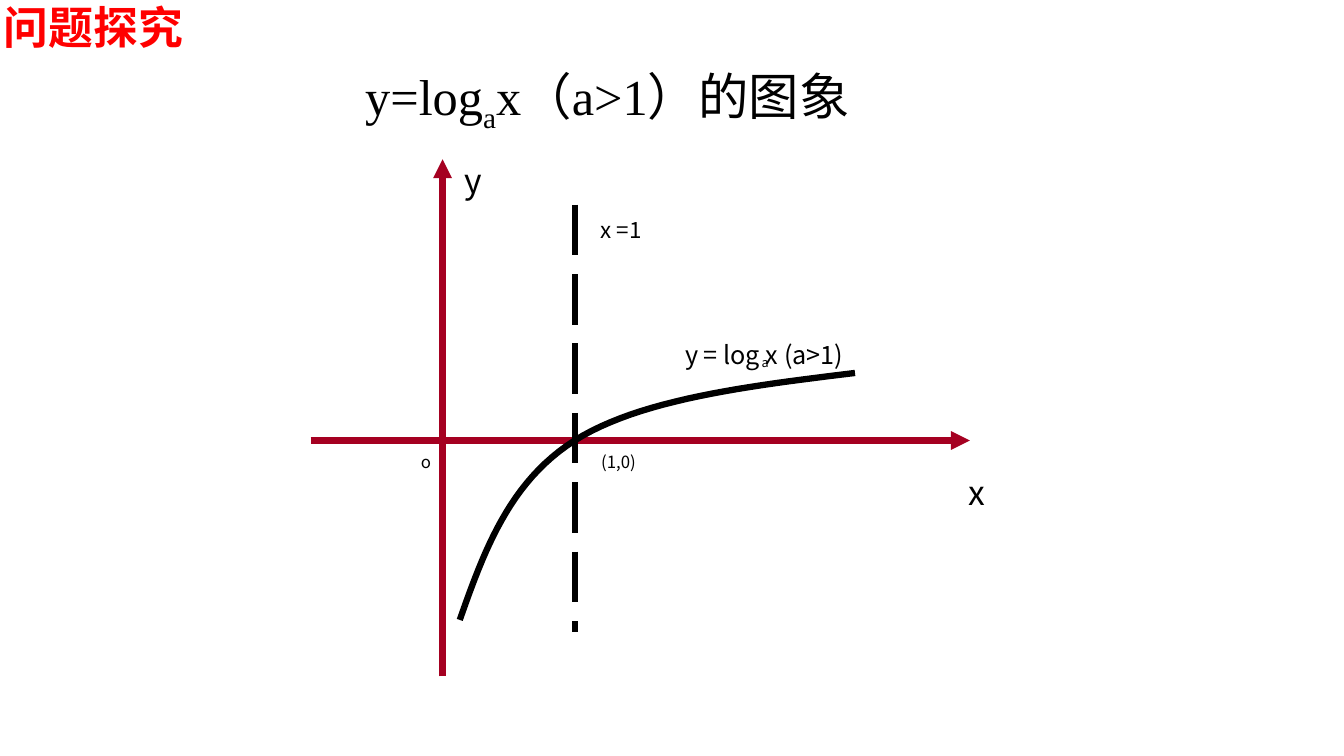
from dataclasses import dataclass

from lxml.etree import SubElement
from pptx import Presentation
from pptx.dml.color import RGBColor
from pptx.enum.dml import MSO_LINE_DASH_STYLE as Dash
from pptx.enum.shapes import MSO_CONNECTOR
from pptx.enum.text import MSO_AUTO_SIZE as AutoSize, PP_ALIGN
from pptx.oxml import parse_xml
from pptx.oxml.ns import nsdecls, qn
from pptx.util import Inches, Pt

BLACK = RGBColor(0x00, 0x00, 0x00)
RED = RGBColor(0xFF, 0x00, 0x00)
CRIMSON = RGBColor(0xA5, 0x00, 0x21)
SANS = "Noto Sans CJK SC"
SERIF = "Times New Roman"
STROKE = Pt(4.5)


@dataclass
class Line:
    start: tuple[float, float]
    end: tuple[float, float]
    color: RGBColor
    arrow: bool = False
    dash: Dash | None = None


@dataclass
class Label:
    text: str
    left: float
    top: float
    width: float
    height: float
    size: int


LINES = [
    Line((3.08, 4.37), (9.62, 4.37), CRIMSON, arrow=True),
    Line((4.39, 6.71), (4.39, 1.58), CRIMSON, arrow=True),
    Line((5.7, 2.03), (5.7, 6.27), BLACK, dash=Dash.LONG_DASH),
]

LABELS = [
    Label("x", 9.59, 4.68, 0.2, 0.18, 24),
    Label("y", 4.59, 1.59, 0.2, 0.18, 24),
    Label("o", 4.17, 4.48, 0.11, 0.17, 12),
    Label("(1,0)", 5.86, 4.48, 0.55, 0.17, 12),
    Label("x =1", 5.86, 2.14, 0.6, 0.23, 16),
    Label("y = log x (a>1)", 6.68, 3.37, 1.8, 0.26, 18),
    Label("a", 7.55, 3.52, 0.08, 0.13, 9),
]

# Each Bezier segment: start, two controls, end
CURVE = [
    ((4.56, 6.15), (4.8, 5.47), (5.05, 4.78), (5.7, 4.37)),
    ((5.7, 4.37), (6.35, 3.96), (7.42, 3.83), (8.48, 3.7)),
]
CURVE_STEPS = 24


def set_font(font, name: str, size: int, color: RGBColor) -> None:
    font.name, font.size = name, Pt(size)
    font.color.rgb = color


def add_box(slide, left: float, top: float, width: float, height: float):
    return slide.shapes.add_textbox(
        Inches(left), Inches(top), Inches(width), Inches(height)).text_frame


def add_line(slide, line: Line) -> None:
    connector = slide.shapes.add_connector(
        MSO_CONNECTOR.STRAIGHT, *map(Inches, line.start + line.end))
    connector.line.color.rgb = line.color
    connector.line.width = STROKE
    if line.dash is not None:
        connector.line.dash_style = line.dash
    if line.arrow:
        SubElement(connector.line._get_or_add_ln(), qn("a:tailEnd"), type="triangle")
    SubElement(connector._element.spPr, qn("a:effectLst"))


def add_label(slide, label: Label) -> None:
    frame = add_box(slide, label.left, label.top, label.width, label.height)
    frame.word_wrap = False
    frame.margin_left = frame.margin_right = frame.margin_top = frame.margin_bottom = 0
    paragraph = frame.paragraphs[0]
    paragraph.text = label.text
    paragraph.alignment = PP_ALIGN.CENTER
    set_font(paragraph.font, SANS, label.size, BLACK)
    paragraph.font._element.insert(0, parse_xml(
        f'<a:ln {nsdecls("a")} w="{Pt(0.75)}"><a:solidFill>'
        f'<a:srgbClr val="{BLACK}"/></a:solidFill></a:ln>'))


def bezier_point(points, t: float) -> tuple[int, int]:
    weights = ((1 - t) ** 3, 3 * t * (1 - t) ** 2, 3 * t ** 2 * (1 - t), t ** 3)
    x, y = (sum(w * p[axis] for w, p in zip(weights, points)) for axis in (0, 1))
    return Inches(x), Inches(y)


def add_curve(slide) -> None:
    start = bezier_point(CURVE[0], 0)
    builder = slide.shapes.build_freeform(*start)
    builder.add_line_segments(
        [bezier_point(segment, step / CURVE_STEPS)
         for segment in CURVE for step in range(1, CURVE_STEPS + 1)], close=False)
    shape = builder.convert_to_shape()
    shape.shadow.inherit = False
    shape.fill.background()
    shape.line.color.rgb = BLACK
    shape.line.width = STROKE


def add_title(slide) -> None:
    frame = add_box(slide, 3.44, 0.6, 6.48, 0.71)
    frame.word_wrap = True
    frame.auto_size = AutoSize.SHAPE_TO_FIT_TEXT
    paragraph = frame.paragraphs[0]
    for text, size in ((" ", 24), ("y=log", 36), ("a", 36), ("x（a>1）的图象", 36)):
        run = paragraph.add_run()
        run.text = text
        set_font(run.font, SERIF, size, BLACK)
    subscript = paragraph.runs[2]
    subscript.font._element.set("baseline", "-25000")


def add_heading(slide) -> None:
    frame = add_box(slide, -0.06, -0.05, 2, 1.18)
    frame.word_wrap = False
    frame.auto_size = AutoSize.SHAPE_TO_FIT_TEXT
    paragraph = frame.paragraphs[0]
    paragraph.text = "问题探究"
    set_font(paragraph.font, SANS, 32, RED)
    paragraph.font.bold = True
    SubElement(paragraph.font._element, qn("a:ea"), typeface=SANS)


def main() -> None:
    presentation = Presentation()
    presentation.slide_width, presentation.slide_height = Inches(13.33), Inches(7.5)
    slide = presentation.slides.add_slide(presentation.slide_layouts[6])

    # Headings
    add_title(slide)
    add_heading(slide)

    # Axes, the line x = 1 and the logarithm curve
    for line in LINES:
        add_line(slide, line)
    add_curve(slide)

    # Labels of the graph
    for label in LABELS:
        add_label(slide, label)

    presentation.save("out.pptx")


if __name__ == "__main__":
    main()
